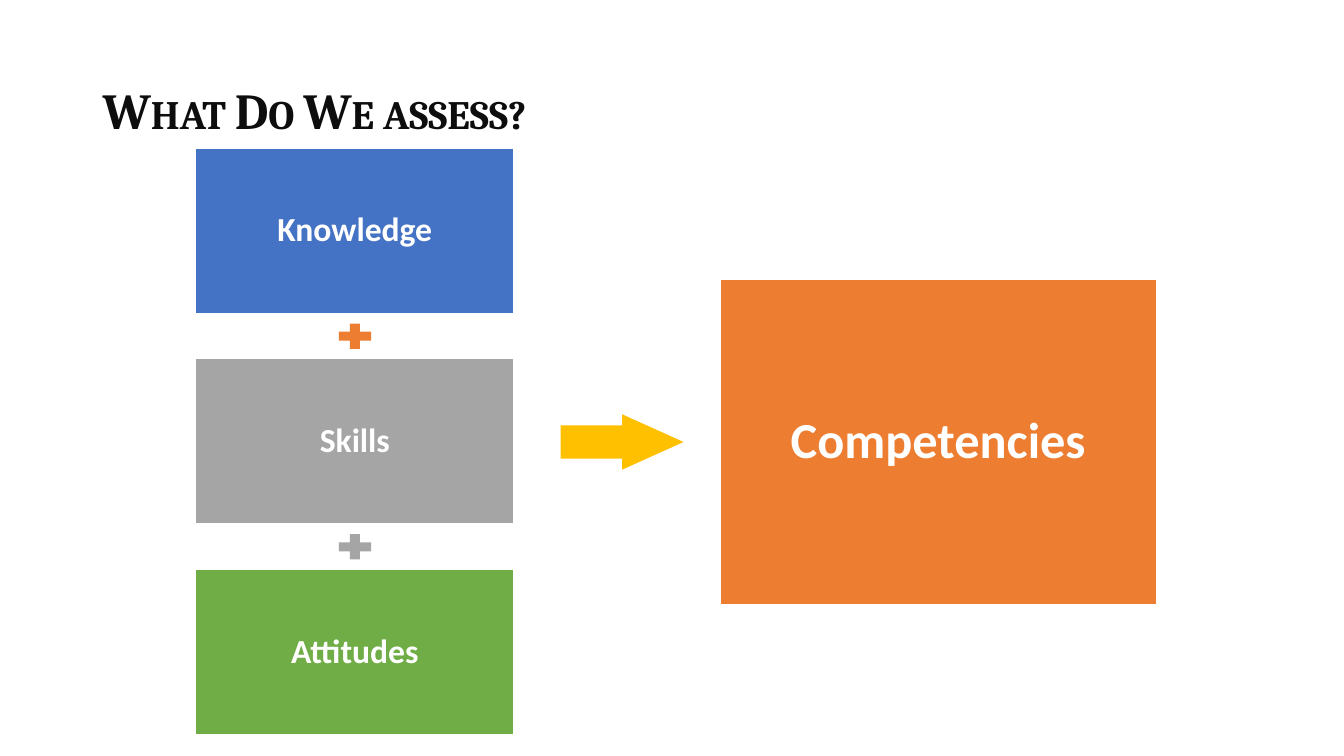
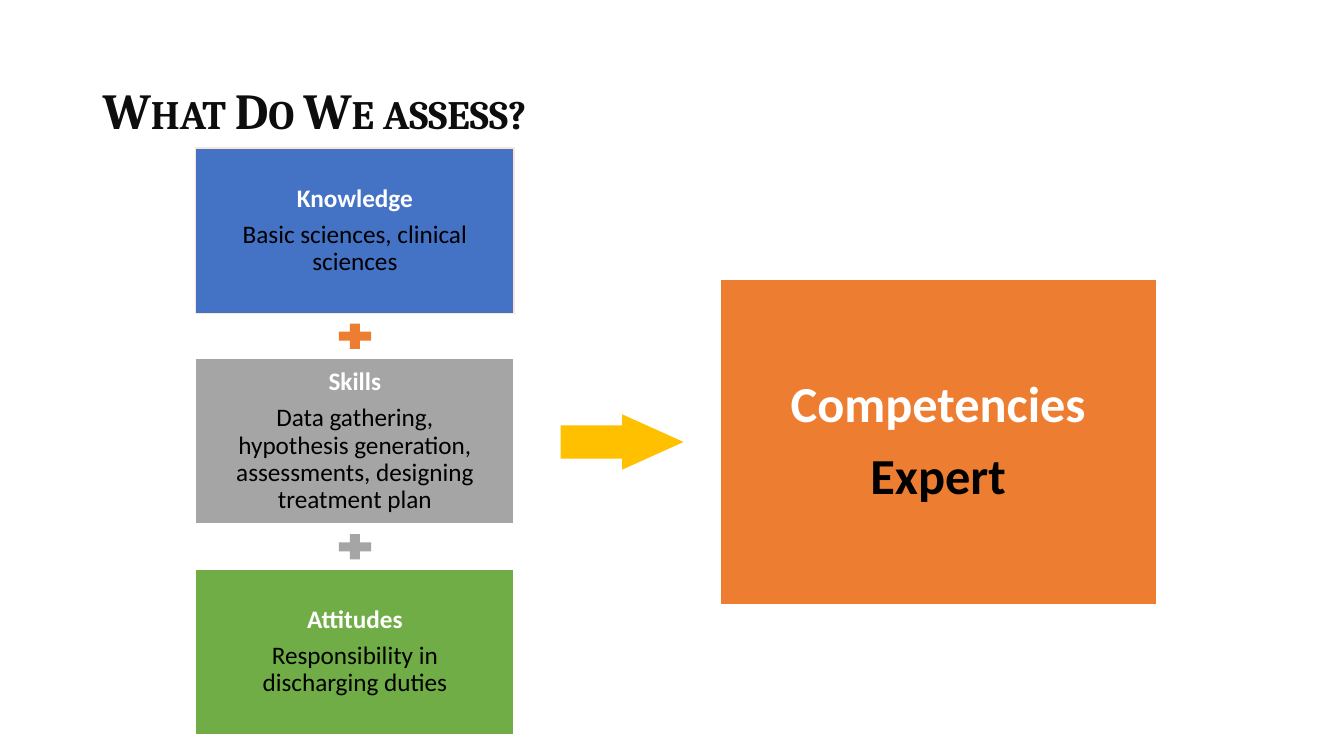
"""Builds two slides on how knowledge, skills and attitudes add up to competencies."""
from pptx import Presentation
from pptx.dml.color import RGBColor
from pptx.enum.shapes import MSO_SHAPE
from pptx.enum.text import MSO_ANCHOR, PP_ALIGN
from pptx.util import Inches, Pt

BLUE = RGBColor(0x44, 0x72, 0xC4)
ORANGE = RGBColor(0xED, 0x7D, 0x31)
GRAY = RGBColor(0xA5, 0xA5, 0xA5)
GREEN = RGBColor(0x70, 0xAD, 0x47)
GOLD = RGBColor(0xFF, 0xC0, 0x00)
PEACH = RGBColor(0xFB, 0xE5, 0xD6)
WHITE = RGBColor(0xFF, 0xFF, 0xFF)
BLACK = RGBColor(0x00, 0x00, 0x00)
INK = RGBColor(0x0D, 0x0D, 0x0D)

COLUMN_LEFT, COLUMN_TOP = 1.94, 1.47
PART_WIDTH, PART_HEIGHT, PART_PITCH = 3.16, 1.64, 2.09
PART_COLORS = (BLUE, GRAY, GREEN)
PLUS_COLORS = (ORANGE, GRAY)
PLUS_X = (3.36, 3.47, 3.57, 3.68)
PLUS_Y = (3.21, 3.29, 3.38, 3.46)
PLUS_CORNERS = ((0, 1), (1, 1), (1, 0), (2, 0), (2, 1), (3, 1),
                (3, 2), (2, 2), (2, 3), (1, 3), (1, 2), (0, 2))

SLIDES = (
    {
        "part_size": 24,
        "first_border": WHITE,
        "parts": (("Knowledge",), ("Skills",), ("Attitudes",)),
        "result": ("Competencies",),
    },
    {
        "part_size": 18,
        "first_border": PEACH,
        "parts": (
            ("Knowledge", "Basic sciences, clinical sciences"),
            ("Skills", "Data gathering, hypothesis generation, assessments, designing treatment plan"),
            ("Attitudes", "Responsibility in discharging duties"),
        ),
        "result": ("Competencies", "Expert"),
    },
)


def write(shape, lines, size, font="Calibri", colors=(WHITE, BLACK), bolds=(True, False),
          align=PP_ALIGN.CENTER, inset=(0.1, 0.05), small_caps=False):
    frame = shape.text_frame
    frame.word_wrap = True
    frame.vertical_anchor = MSO_ANCHOR.MIDDLE
    frame.margin_left = frame.margin_right = Inches(inset[0])
    frame.margin_top = frame.margin_bottom = Inches(inset[1])
    for index, line in enumerate(lines):
        paragraph = frame.paragraphs[0] if index == 0 else frame.add_paragraph()
        paragraph.alignment = align
        paragraph.line_spacing = 0.9
        paragraph.space_after = Pt(round(size * 0.35, 1))
        run = paragraph.add_run()
        run.text = line
        run.font.name = font
        run.font.size = Pt(size)
        run.font.bold = bolds[index]
        run.font.color.rgb = colors[index]
        if small_caps:
            run.font._element.set("cap", "small")


def paint(shape, fill, border=None):
    shape.shadow.inherit = False
    shape.fill.solid()
    shape.fill.fore_color.rgb = fill
    if border is None:
        shape.line.fill.background()
    else:
        shape.line.color.rgb = border
        shape.line.width = Pt(1)


deck = Presentation()
deck.slide_width, deck.slide_height = Inches(13.33), Inches(7.5)

for content in SLIDES:
    slide = deck.slides.add_slide(deck.slide_layouts[6])
    shapes = slide.shapes

    title = shapes.add_textbox(Inches(0.92), Inches(0.4), Inches(11.5), Inches(1.45))
    write(title, ["What Do We assess?"], 36, font="Cambria", colors=(INK,),
          align=PP_ALIGN.LEFT, small_caps=True)

    borders = (content["first_border"], WHITE, WHITE)
    for row, (lines, color, border) in enumerate(zip(content["parts"], PART_COLORS, borders)):
        part = shapes.add_shape(MSO_SHAPE.RECTANGLE, Inches(COLUMN_LEFT),
                                Inches(COLUMN_TOP + row * PART_PITCH),
                                Inches(PART_WIDTH), Inches(PART_HEIGHT))
        paint(part, color, border)
        write(part, lines, content["part_size"], inset=(0.37, 0.26))

    for row, color in enumerate(PLUS_COLORS):
        corners = [(Inches(PLUS_X[x]), Inches(PLUS_Y[y] + row * PART_PITCH))
                   for x, y in PLUS_CORNERS]
        outline = shapes.build_freeform(*corners[0])
        outline.add_line_segments(corners[1:], close=True)
        paint(outline.convert_to_shape(), color)

    arrow = shapes.add_shape(MSO_SHAPE.RIGHT_ARROW, Inches(5.56), Inches(4.11),
                             Inches(1.22), Inches(0.55))
    arrow.adjustments[0] = 0.6
    arrow.adjustments[1] = 1.11
    paint(arrow, GOLD)

    result = shapes.add_shape(MSO_SHAPE.RECTANGLE, Inches(7.14), Inches(2.77),
                              Inches(4.33), Inches(3.23))
    paint(result, ORANGE, WHITE)
    write(result, content["result"], 36, bolds=(True, True), inset=(0.69, 0.49))

deck.save("out.pptx")
